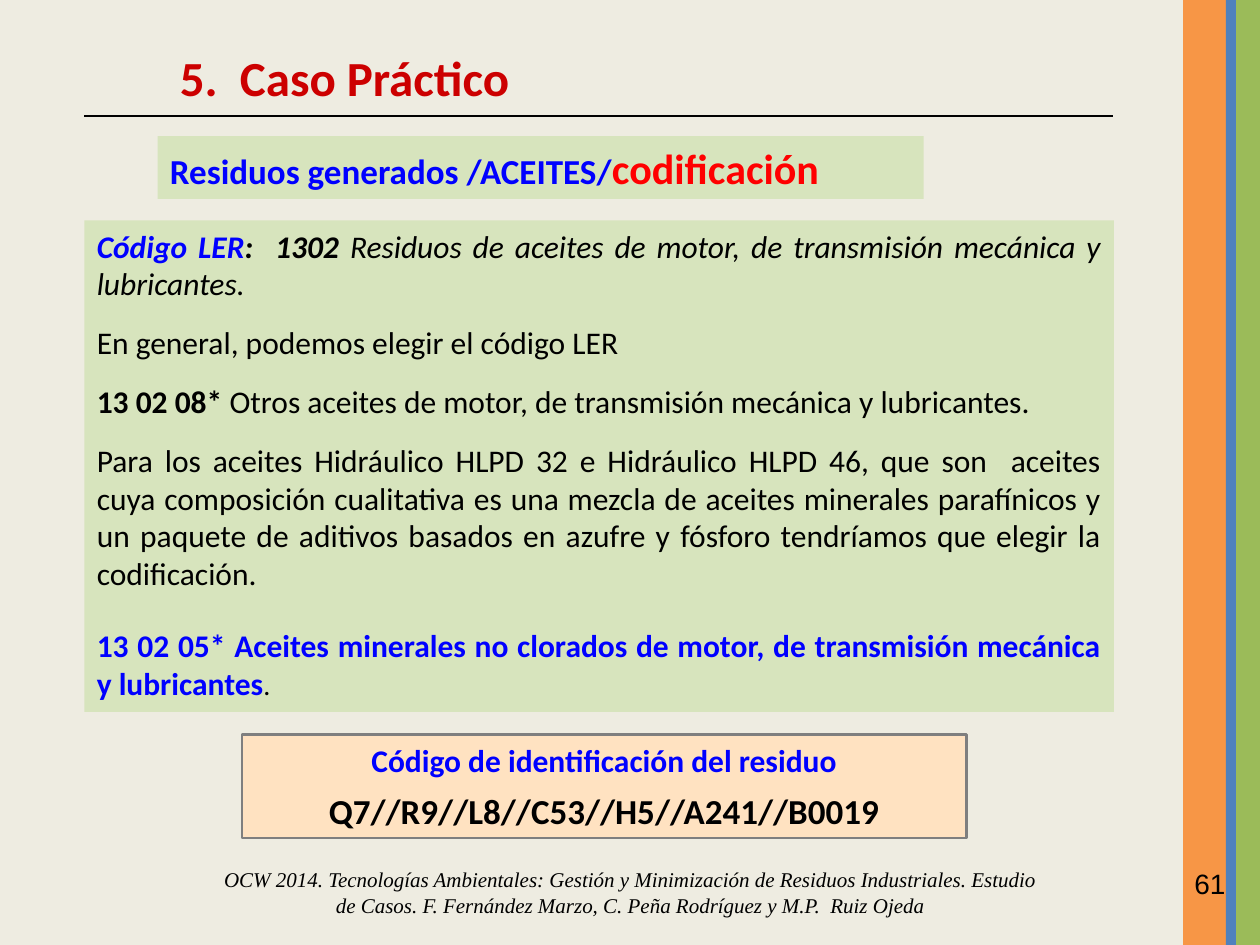
from pptx import Presentation
from pptx.dml.color import RGBColor
from pptx.enum.shapes import MSO_CONNECTOR, MSO_SHAPE
from pptx.enum.text import MSO_ANCHOR, PP_ALIGN
from pptx.oxml.ns import qn
from pptx.util import Inches, Pt
from lxml import etree

RECT = MSO_SHAPE.RECTANGLE
LEFT, MID, JUST = PP_ALIGN.LEFT, PP_ALIGN.CENTER, PP_ALIGN.JUSTIFY
TOP, CENTER = MSO_ANCHOR.TOP, MSO_ANCHOR.MIDDLE
BLACK, BLUE, RED, GREEN = "000000", "0000FF", "FF0000", "D7E4BD"


def color(code):
    return RGBColor.from_string(code)


def write(box, runs, align=LEFT, before=0, anchor=TOP, font="Calibri",
          size=18, ink=BLACK, bold=False, italic=False):
    """Add a paragraph of (text, overrides) runs; the first fills the empty one."""
    frame = box.text_frame
    frame.word_wrap = True
    frame.vertical_anchor = anchor
    para = frame.paragraphs[0]
    if para.runs:
        para = frame.add_paragraph()
    para.alignment = align
    para.space_before = Pt(before)
    base = dict(size=size, ink=ink, bold=bold, italic=italic)
    for text, change in runs:
        look = {**base, **change}
        run = para.add_run()
        run.text = text
        run.font.name = font
        run.font.size = Pt(look["size"])
        run.font.bold = look["bold"]
        run.font.italic = look["italic"]
        run.font.color.rgb = color(look["ink"])
    return para


deck = Presentation()
deck.slide_width, deck.slide_height = Inches(10), Inches(7.5)
slide = deck.slides.add_slide(deck.slide_layouts[6])
slide.background.fill.solid()
slide.background.fill.fore_color.rgb = color("EEECE1")
shapes = slide.shapes

# Side bars and filled panels
panels = []
for left, top, width, height, fill in [
    (9.39, 0, 0.35, 7.5, "F79646"),
    (9.81, 0, 0.19, 7.5, "9BBB59"),
    (9.73, 0, 0.08, 7.5, "4F81BD"),
    (1.25, 1.08, 6.08, 0.5, GREEN),
    (0.67, 1.75, 8.17, 3.9, GREEN),
    (1.92, 5.83, 5.75, 0.82, "FFE2C1"),
]:
    panel = shapes.add_shape(RECT, Inches(left), Inches(top), Inches(width), Inches(height))
    panel.shadow.inherit = False
    panel.fill.solid()
    panel.fill.fore_color.rgb = color(fill)
    panel.line.fill.background()
    panels.append(panel)
topic, body, code = panels[3:]
code.line.color.rgb = color("7F7F7F")
code.line.width = Pt(1.5)

# Title and rule
title = shapes.add_textbox(Inches(1.33), Inches(0.33), Inches(3.25), Inches(0.57))
para = write(title, [("5.  Caso Práctico", {})], size=28, ink="CC0000", bold=True)
props = para._p.get_or_add_pPr()
props.set("marL", str(Inches(0.38)))
props.set("indent", str(Inches(-0.38)))

rule = shapes.add_connector(MSO_CONNECTOR.STRAIGHT, Inches(0.67), Inches(0.92),
                            Inches(8.83), Inches(0.92))
rule.line.color.rgb = color(BLACK)
rule.line.width = Pt(0.75)
etree.SubElement(rule._element.spPr, qn("a:effectLst"))

# Panel texts
write(topic, [("Residuos generados /ACEITES/", {}),
              ("codificación", dict(size=24, ink=RED))],
      align=JUST, size=20, ink=BLUE, bold=True)

write(body, [("Código LER", dict(ink=BLUE, bold=True)),
             (":  1302", dict(bold=True)),
             (" Residuos de aceites de motor, de transmisión mecánica y lubricantes.", {})],
      align=JUST, italic=True)
write(body, [("En general, podemos elegir el código LER", {})], before=12)
write(body, [("13 02 08* ", dict(bold=True)),
             ("Otros aceites de motor, de transmisión mecánica y lubricantes. ", {})],
      align=JUST, before=12)
write(body, [("Para los aceites Hidráulico HLPD 32 e Hidráulico HLPD 46, que son  aceites "
              "cuya composición cualitativa es una mezcla de aceites minerales parafínicos y "
              "un paquete de aditivos basados en azufre y fósforo tendríamos que elegir la "
              "codificación.", {})], align=JUST, before=12)
write(body, [("13 02 05* Aceites minerales no clorados de motor, de transmisión mecánica "
              "y lubricantes", dict(ink=BLUE, bold=True)),
             (".", dict(size=16))], align=JUST, before=19.5)

write(code, [("Código de identificación del residuo", {})], align=MID, ink=BLUE, bold=True)
write(code, [("Q7//R9//L8//C53//H5//A241//B0019", {})],
      align=MID, before=6, size=20, bold=True)

# Footer and page number
foot = shapes.add_textbox(Inches(1.67), Inches(6.83), Inches(6.67), Inches(0.5))
write(foot, [("OCW 2014. Tecnologías Ambientales: Gestión y Minimización de Residuos "
              "Industriales. Estudio de Casos. F. Fernández Marzo, C. Peña Rodríguez y "
              "M.P.  Ruiz Ojeda", {})],
      align=MID, anchor=CENTER, font="Times New Roman", size=12, italic=True)
page = shapes.add_textbox(Inches(9.38), Inches(6.83), Inches(0.62), Inches(0.52))
write(page, [("61", {})], font="Arial", size=16)

deck.save("out.pptx")
